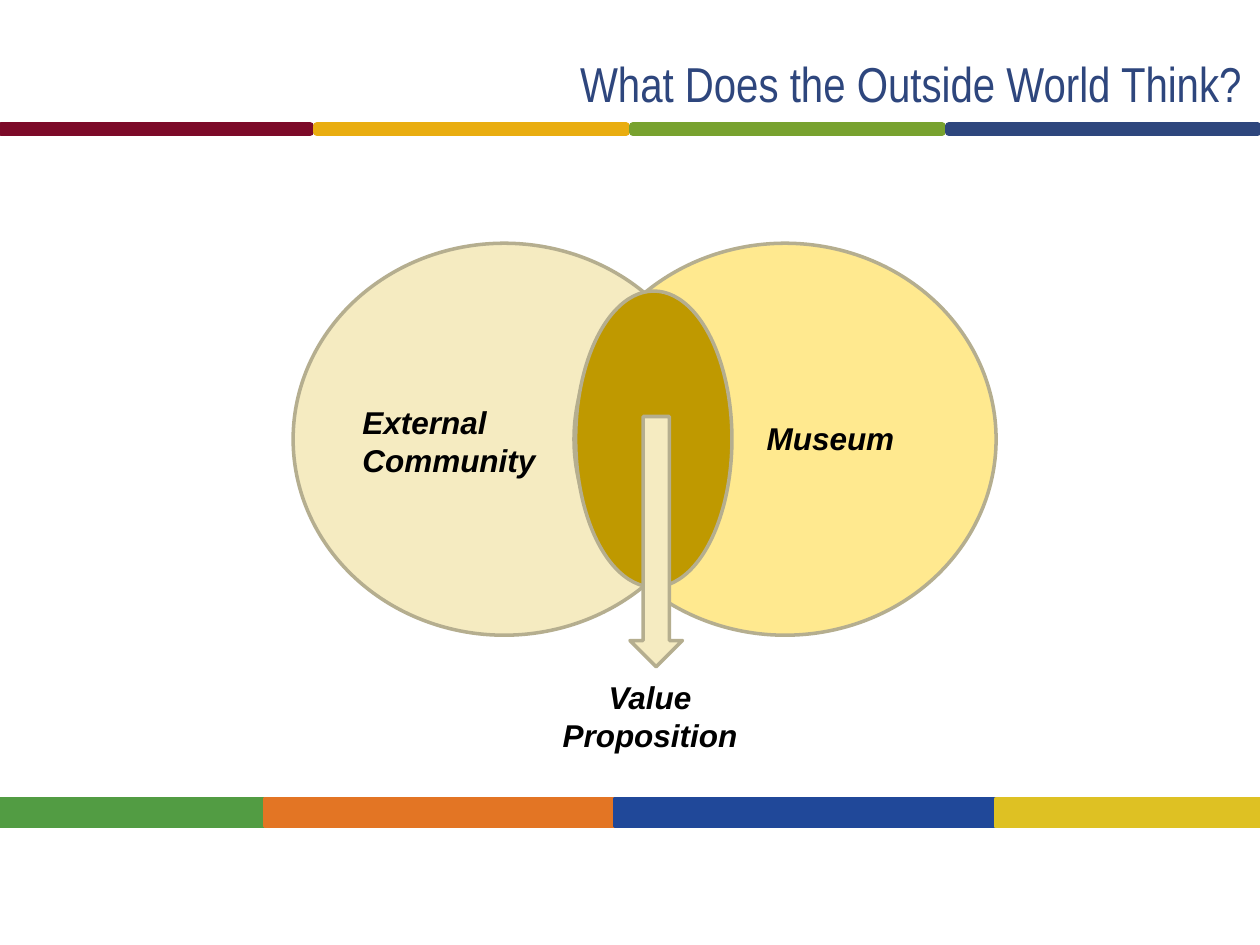
from pptx import Presentation
from pptx.dml.color import RGBColor
from pptx.enum.shapes import MSO_SHAPE as SHAPE
from pptx.enum.text import MSO_ANCHOR as ANCHOR, PP_ALIGN as ALIGN
from pptx.util import Pt

OUTLINE = "B5AE8F"
TOP_COLORS = ["7C0A28", "E9AD10", "78A22F", "2E467D"]
BOTTOM_BARS = [
    (151.2, "529C43"),
    (200, "E37524"),
    (217.8, "204899"),
    (151, "DEC123"),
]


def color(value):
    return RGBColor.from_string(value)


def place(s, left, top, width, height):
    s.left, s.top, s.width, s.height = Pt(left), Pt(top), Pt(width), Pt(height)


def add_shape(slide, kind, box, fill, line, weight=2):
    s = slide.shapes.add_shape(kind, *map(Pt, box))
    s.shadow.inherit = False
    s.fill.solid()
    s.fill.fore_color.rgb = color(fill)
    s.line.color.rgb = color(line)
    s.line.width = Pt(weight)


def add_run(p, text, font, size, fill, strong=False):
    r = p.add_run()
    r.text = text
    r.font.name = font
    r.font.size = Pt(size)
    r.font.color.rgb = color(fill)
    r.font.bold = r.font.italic = strong


def add_label(slide, box, text, align=ALIGN.LEFT):
    tf = slide.shapes.add_textbox(*map(Pt, box)).text_frame
    tf.word_wrap = True
    p = tf.paragraphs[0]
    p.alignment = align
    add_run(p, text, "Arial", 18, "000000", strong=True)


def add_title(slide, text):
    s = slide.shapes.title
    place(s, 162, 28, 554.4, 43.2)
    tf = s.text_frame
    tf.word_wrap = True
    tf.vertical_anchor = ANCHOR.MIDDLE
    p = tf.paragraphs[0]
    p.alignment = ALIGN.RIGHT
    p.line_spacing = 0.9
    add_run(p, text, "Arial Narrow", 28, "2E467D")


def add_top_bars(slide):
    for i, fill in enumerate(TOP_COLORS):
        box = (0.7 + 180.5 * i, 72, 176.4, 3.6)
        add_shape(slide, SHAPE.RECTANGLE, box, fill, fill, 4.5)


def add_bottom_bars(slide):
    left = 0
    for width, fill in BOTTOM_BARS:
        box = (left, 456.5, width, 16)
        add_shape(slide, SHAPE.RECTANGLE, box, fill, fill)
        left += width


def add_venn(slide):
    for box, fill in [
        ((167.5, 139, 241.2, 224), "F5EBC1"),
        ((328, 139, 241.2, 224), "FFE98F"),
        ((329, 166.3, 89.3, 169.2), "BF9900"),
    ]:
        add_shape(slide, SHAPE.OVAL, box, fill, OUTLINE)
    add_label(slide, (200, 226.8, 119, 51), "External Community")
    add_label(slide, (431, 236, 125, 29), "Museum")
    add_shape(slide, SHAPE.DOWN_ARROW, (360, 238, 30, 143), "F5EBC1", OUTLINE)
    add_label(slide, (298, 384, 147, 51), "Value Proposition", ALIGN.CENTER)


def main():
    prs = Presentation()
    prs.slide_width, prs.slide_height = Pt(720), Pt(540)
    slide = prs.slides.add_slide(prs.slide_layouts[5])
    add_top_bars(slide)
    add_bottom_bars(slide)
    add_venn(slide)
    add_title(slide, "What Does the Outside World Think?")
    prs.save("out.pptx")


if __name__ == "__main__":
    main()
